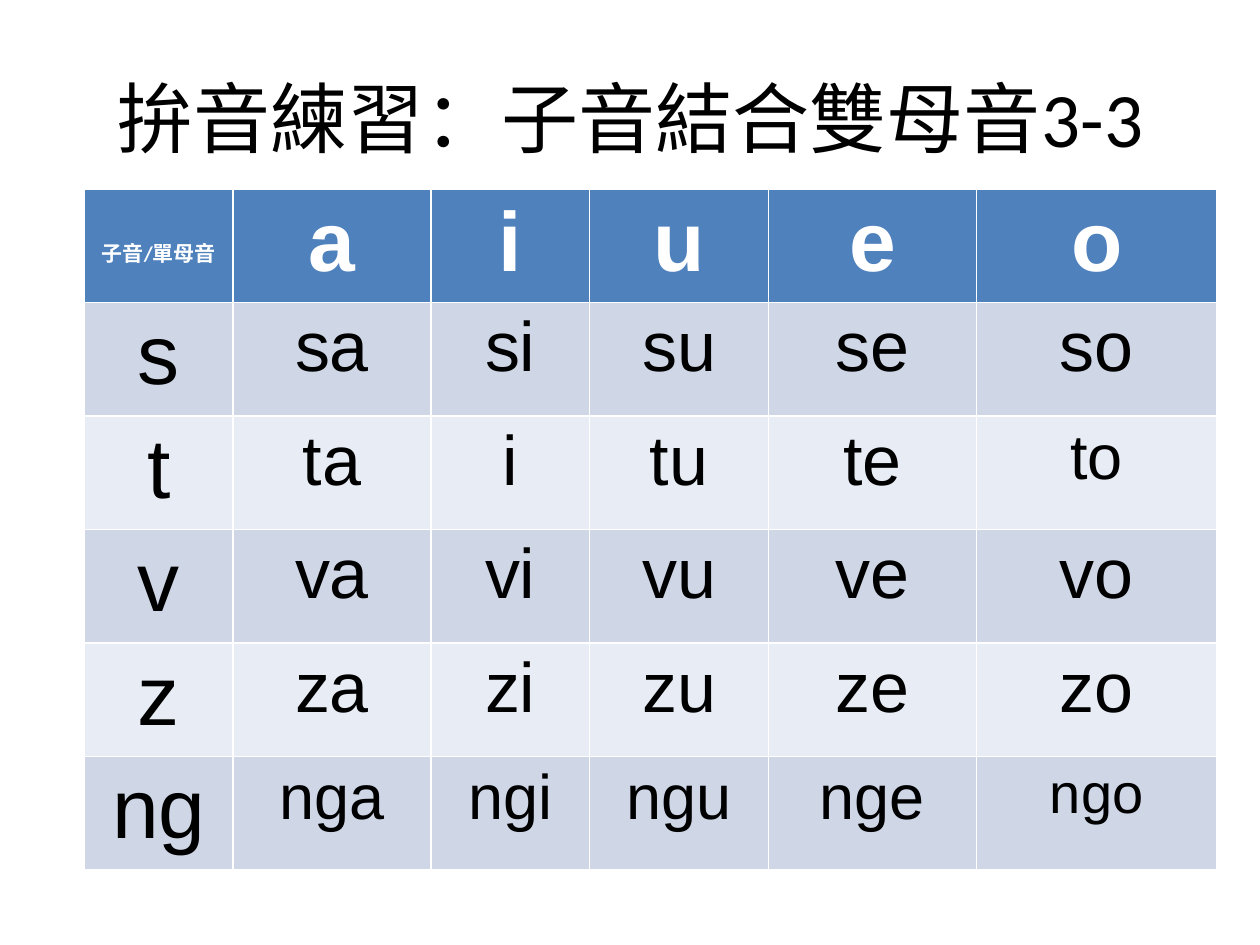
from dataclasses import dataclass

from pptx import Presentation
from pptx.dml.color import RGBColor
from pptx.enum.text import MSO_ANCHOR, PP_ALIGN
from pptx.util import Inches, Pt


@dataclass(frozen=True)
class Theme:
    ink: str = "000000"
    white: str = "FFFFFF"
    head: str = "4F81BD"
    bands: tuple = ("CFD7E7", "E8ECF4")
    sans: str = "Calibri"
    body: str = "Arial"
    title: int = 44
    letter: int = 48
    sound: int = 40
    small: int = 36
    least: int = 32
    label: int = 12


class Sheet:
    """Draws titles and sound tables on one slide in a shared theme."""

    def __init__(self, slide, theme):
        self.slide = slide
        self.theme = theme

    def label(self, frame, text, size, color, font, bold=False):
        frame.text = text
        line = frame.paragraphs[0]
        line.alignment = PP_ALIGN.CENTER
        for run in line.runs:
            run.font.size = Pt(size)
            run.font.name = font
            run.font.bold = bold
            run.font.color.rgb = RGBColor.from_string(color)

    def title(self, text, left, top, width, height):
        box = self.slide.shapes.add_textbox(
            Inches(left), Inches(top), Inches(width), Inches(height))
        frame = box.text_frame
        frame.word_wrap = True
        frame.vertical_anchor = MSO_ANCHOR.MIDDLE
        self.label(frame, text, self.theme.title, self.theme.ink, self.theme.sans)

    def cell(self, cell, text, size, fill, color, font, bold):
        cell.fill.solid()
        cell.fill.fore_color.rgb = RGBColor.from_string(fill)
        self.label(cell.text_frame, text, size, color, font, bold)

    def table(self, rows, left, top, widths, heights, sizes):
        theme = self.theme
        grid = self.slide.shapes.add_table(
            len(rows), len(widths), Inches(left), Inches(top),
            Inches(sum(widths)), Inches(sum(heights))).table
        for col, width in zip(grid.columns, widths):
            col.width = Inches(width)
        for r, (row, height) in enumerate(zip(rows, heights)):
            grid.rows[r].height = Inches(height)
            head = r == 0
            fill = theme.head if head else theme.bands[(r - 1) % 2]
            color = theme.white if head else theme.ink
            for c, text in enumerate(row):
                edge = head or c == 0
                size = sizes.get(text, theme.letter if edge else theme.sound)
                font = theme.sans if head and c == 0 else theme.body
                self.cell(grid.cell(r, c), text, size, fill, color, font, head)
        grid.cell(0, 0).margin_top = Inches(0.38)


def main():
    deck = Presentation()
    deck.slide_width, deck.slide_height = Inches(10), Inches(7.5)
    theme = Theme()
    sheet = Sheet(deck.slides.add_slide(deck.slide_layouts[6]), theme)
    sheet.title("拚音練習：子音結合雙母音3-3", 0.5, 0.3, 9, 1.25)

    corner = "子音/單母音"
    rows = [
        [corner, "a", "i", "u", "e", "o"],
        ["s", "sa", "si", "su", "se", "so"],
        ["t", "ta", "i", "tu", "te", "to"],
        ["v", "va", "vi", "vu", "ve", "vo"],
        ["z", "za", "zi", "zu", "ze", "zo"],
        ["ng", "nga", "ngi", "ngu", "nge", "ngo"],
    ]
    sizes = dict.fromkeys(["to", "nga", "ngi", "ngu", "nge"], theme.small)
    sizes.update({corner: theme.label, "ngo": theme.least})
    sheet.table(rows, 0.67, 1.5, [1.18, 1.57, 1.26, 1.42, 1.65, 1.91],
                [0.87] * 5 + [0.78], sizes)
    deck.save("out.pptx")


if __name__ == "__main__":
    main()
